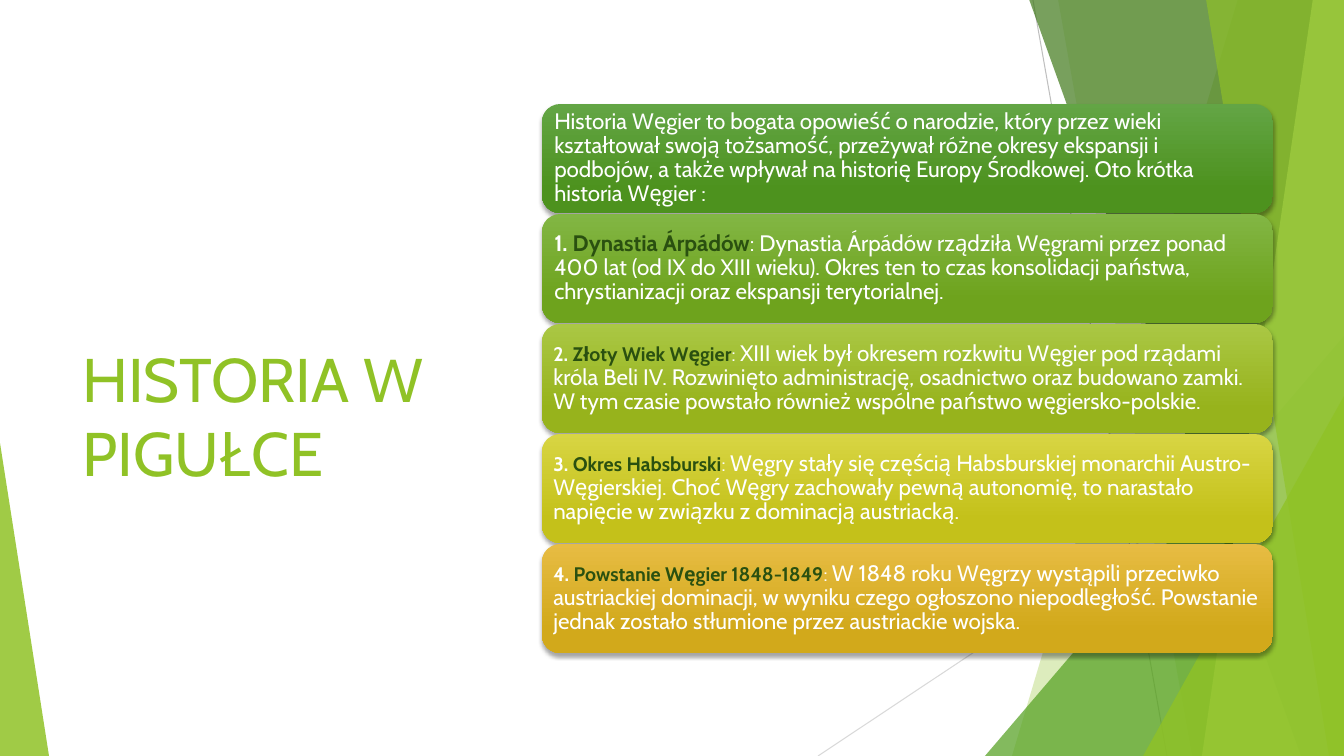
from lxml.etree import SubElement
from pptx import Presentation
from pptx.dml.color import RGBColor
from pptx.enum.shapes import MSO_CONNECTOR, MSO_SHAPE
from pptx.enum.text import MSO_ANCHOR, MSO_AUTO_SIZE, PP_ALIGN
from pptx.oxml.ns import qn
from pptx.util import Emu, Pt

FONT = "Cabin"
GREEN, DARK_GREEN, WHITE = "90C226", "2A5010", "FFFFFF"
TITLE = "HISTORIA W PIGUŁCE"

# gradient top, gradient bottom, inset px, lead size, number, heading, separator, text
CARDS = [
    ("63A545", "4D921E", 7, 16, "", "", "",
     "Historia Węgier to bogata opowieść o narodzie, który przez wieki kształtował "
     "swoją tożsamość, przeżywał różne okresy ekspansji i podbojów, a także wpływał "
     "na historię Europy Środkowej. Oto krótka historia Węgier :"),
    ("82B644", "6EA31D", 7, 16, "1. ", "Dynastia Árpádów", ": ",
     "Dynastia Árpádów rządziła Węgrami przez ponad 400 lat (od IX do XIII wieku). "
     "Okres ten to czas konsolidacji państwa, chrystianizacji oraz ekspansji "
     "terytorialnej."),
    ("AAC744", "97B31C", 6, 14, "2. ", "Złoty Wiek Węgier", ": ",
     "XIII wiek był okresem rozkwitu Węgier pod rządami króla Beli IV. Rozwinięto "
     "administrację, osadnictwo oraz budowano zamki. W tym czasie powstało również "
     "wspólne państwo węgiersko-polskie."),
    ("D8D543", "C4C11A", 6, 14, "3. ", "Okres Habsburski", ": ",
     "Węgry stały się częścią Habsburskiej monarchii Austro-Węgierskiej. Choć Węgry "
     "zachowały pewną autonomię, to narastało napięcie w związku z dominacją "
     "austriacką."),
    ("E7BC43", "D2A91B", 6, 14, "4. ", "Powstanie Węgier 1848-1849", ": ",
     "W 1848 roku Węgrzy wystąpili przeciwko austriackiej dominacji, w wyniku czego "
     "ogłoszono niepodległość. Powstanie jednak zostało stłumione przez austriackie "
     "wojska."),
]

WIDTH, HEIGHT = 1344, 756
RAYS = [((1033, 0), (1167, HEIGHT), "BFBFBF"), ((WIDTH, 406), (818, HEIGHT), "D9D9D9")]
# Bands run to the right edge: left end at the top, left end at the bottom, colour, opacity
# Triangles: left, top, width, height, apex, colour, opacity
BACKDROP = [
    ("band", (1238, 1012), GREEN, 30),
    ("band", (1058, 1192), GREEN, 20),
    ("triangle", (985, 336, 359, 420, 1), "54A021", 72),
    ("band", (1029, 1301), "3F7819", 70),
    ("band", (1313, 1202), "C0E474", 70),
    ("band", (1206, 1329), GREEN, 65),
    ("triangle", (1143, 396, 201, 360, 1), GREEN, 80),
    ("triangle", (0, 443, 49, 313, 0), GREEN, 85),
]
TITLE_BOX = (72, 152, 391, 452)
TITLE_DROP = 79
CARD_LEFT, CARD_TOP, CARD_WIDTH, CARD_HEIGHT, CARD_PITCH = 542, 104, 731, 109, 110
SCALE = 914400 / 100.8


def px(length):
    return Emu(round(length * SCALE))


def rgb(value):
    return RGBColor.from_string(value)


def paint(shape, colour, opacity):
    shape.fill.solid()
    shape.fill.fore_color.rgb = rgb(colour)
    shape.line.fill.background()
    shape.shadow.inherit = False
    srgb = shape._element.spPr.find(qn("a:solidFill"))[0]
    SubElement(srgb, qn("a:alpha"), val=str(opacity * 1000))


def add_backdrop(shapes):
    for start, end, colour in RAYS:
        ray = shapes.add_connector(MSO_CONNECTOR.STRAIGHT, *map(px, start + end))
        ray.line.color.rgb = rgb(colour)
        ray.line.width = Pt(0.75)
        SubElement(ray._element.spPr, qn("a:effectLst"))
    for kind, geometry, colour, opacity in BACKDROP:
        if kind == "band":
            top_left, bottom_left = geometry
            outline = shapes.build_freeform(top_left, -1, scale=SCALE)
            outline.add_line_segments(
                [(WIDTH, -1), (WIDTH, HEIGHT), (bottom_left, HEIGHT)], close=True)
            facet = outline.convert_to_shape()
        else:
            *box, apex = geometry
            facet = shapes.add_shape(MSO_SHAPE.ISOSCELES_TRIANGLE, *map(px, box))
            facet.adjustments[0] = apex
        paint(facet, colour, opacity)


def add_soft_shadow(shape):
    shape.shadow.inherit = False
    effects = shape._element.spPr.find(qn("a:effectLst"))
    shadow = SubElement(effects, qn("a:outerShdw"), blurRad=str(Pt(3)), dist=str(Pt(2)),
                        dir="5400000", algn="ctr", rotWithShape="0")
    black = SubElement(shadow, qn("a:srgbClr"), val="000000")
    SubElement(black, qn("a:alpha"), val="35000")


def add_card(shapes, row, card):
    top_colour, bottom_colour, inset, lead_size, number, heading, separator, text = card
    panel = shapes.add_shape(
        MSO_SHAPE.ROUNDED_RECTANGLE, px(CARD_LEFT), px(CARD_TOP + row * CARD_PITCH),
        px(CARD_WIDTH), px(CARD_HEIGHT))
    panel.fill.gradient()
    panel.fill.gradient_angle = 270
    stops = zip(panel.fill.gradient_stops, (top_colour, bottom_colour), (0, 0.78))
    for stop, colour, position in stops:
        stop.color.rgb = rgb(colour)
        stop.position = position
    panel.line.fill.background()
    add_soft_shadow(panel)

    frame = panel.text_frame
    frame.word_wrap = True
    frame.vertical_anchor = MSO_ANCHOR.MIDDLE
    frame.margin_left = frame.margin_right = px(inset)
    frame.margin_top = frame.margin_bottom = px(inset)
    paragraph = frame.paragraphs[0]
    paragraph.alignment = PP_ALIGN.LEFT
    paragraph.line_spacing = 0.9
    paragraph.font.name = FONT
    runs = [(number, lead_size, WHITE, True), (heading, lead_size, DARK_GREEN, True),
            (separator, lead_size, WHITE, False), (text, 16, WHITE, False)]
    for words, size, colour, bold in runs:
        if words:
            run = paragraph.add_run()
            run.text = words
            run.font.size = Pt(size)
            run.font.bold = bold
            run.font.color.rgb = rgb(colour)


def set_title(title):
    title.left, title.top, title.width, title.height = map(px, TITLE_BOX)
    frame = title.text_frame
    frame.text = TITLE
    frame.word_wrap = True
    frame.auto_size = MSO_AUTO_SIZE.NONE
    frame.vertical_anchor = MSO_ANCHOR.MIDDLE
    frame.margin_top = px(TITLE_DROP)
    paragraph = frame.paragraphs[0]
    paragraph.alignment = PP_ALIGN.LEFT
    paragraph.font.name = FONT
    paragraph.font.size = Pt(44)
    paragraph.font.color.rgb = rgb(GREEN)


def main():
    deck = Presentation()
    deck.slide_width, deck.slide_height = px(WIDTH), px(HEIGHT)
    slide = deck.slides.add_slide(deck.slide_layouts.get_by_name("Title Only"))
    set_title(slide.shapes.title)
    add_backdrop(slide.shapes)
    for row, card in enumerate(CARDS):
        add_card(slide.shapes, row, card)
    deck.save("out.pptx")


if __name__ == "__main__":
    main()
